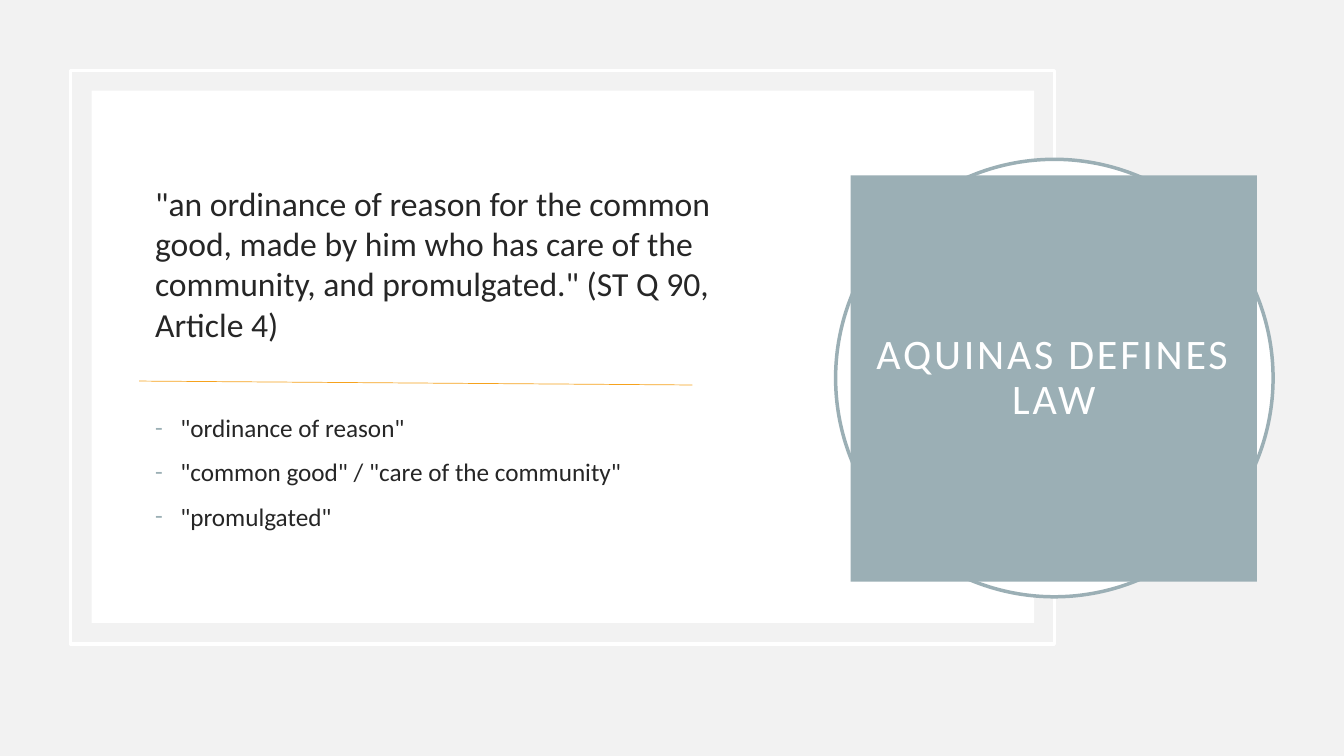
"""Builds the slide on Aquinas's definition of law."""
from lxml.etree import SubElement
from pptx import Presentation
from pptx.dml.color import RGBColor
from pptx.enum.shapes import MSO_CONNECTOR, MSO_SHAPE
from pptx.enum.text import MSO_ANCHOR, PP_ALIGN
from pptx.oxml.ns import qn
from pptx.util import Pt

GREY = RGBColor(0xF2, 0xF2, 0xF2)
WHITE = RGBColor(0xFF, 0xFF, 0xFF)
SLATE = RGBColor(0x9B, 0xAF, 0xB5)
INK = RGBColor(0x26, 0x26, 0x26)
ORANGE = RGBColor(0xF6, 0xA2, 0x1D)


def add_panel(kind, box, fill, line):
    sp = slide.shapes.add_shape(kind, *map(Pt, box))
    sp.shadow.inherit = False
    if fill is None:
        sp.fill.background()
    else:
        sp.fill.solid()
        sp.fill.fore_color.rgb = fill
    if line is None:
        sp.line.fill.background()
    else:
        sp.line.color.rgb = line
        sp.line.width = Pt(2.5)
    return sp


def add_text(p, text, size, color):
    r = p.add_run()
    r.text = text
    for name, value in {"name": "Calibri", "size": Pt(size)}.items():
        setattr(r.font, name, value)
    r.font.color.rgb = color
    return r


prs = Presentation()
prs.slide_width, prs.slide_height = Pt(960), Pt(540)
slide = prs.slides.add_slide(prs.slide_layouts[6])
slide.background.fill.solid()
slide.background.fill.fore_color.rgb = GREY

add_panel(MSO_SHAPE.RECTANGLE, (50.4, 50.4, 702.7, 409.7), None, WHITE)
add_panel(MSO_SHAPE.RECTANGLE, (65.5, 64.8, 673.2, 380.2), WHITE, None)

body = slide.shapes.add_textbox(Pt(103.7), Pt(100.8), Pt(450), Pt(308.2))
tf = body.text_frame
tf.word_wrap = True
tf.vertical_anchor = MSO_ANCHOR.MIDDLE
p = tf.paragraphs[0]
p.space_before = Pt(10)
add_text(p, '"an ordinance of reason for the common good, made by him who has care '
            'of the community, and promulgated." (ST Q 90, Article 4)', 24, INK)

key_phrases = ['"ordinance of reason"',
               '"common good" / "care of the community"',
               '"promulgated"']
for i, phrase in enumerate(key_phrases):
    p = tf.add_paragraph()
    p.space_before = Pt(10 if i else 49)
    add_text(p, phrase, 18, INK)
    pPr = p._p.get_or_add_pPr()
    pPr.set("marL", str(Pt(18)))
    pPr.set("indent", str(-Pt(18)))
    SubElement(SubElement(pPr, qn("a:buClr")), qn("a:srgbClr"), val=str(SLATE))
    SubElement(pPr, qn("a:buFont"), typeface="Calibri")
    SubElement(pPr, qn("a:buChar"), char="-")

add_panel(MSO_SHAPE.OVAL, (596.9, 113.8, 312.5, 312.5), WHITE, SLATE)
title = add_panel(MSO_SHAPE.RECTANGLE, (607.7, 125.3, 290.2, 290.2), SLATE, None)
tf = title.text_frame
frame_format = {"word_wrap": True, "vertical_anchor": MSO_ANCHOR.MIDDLE}
for side in ("left", "right", "top", "bottom"):
    frame_format[f"margin_{side}"] = Pt(14.4)
for name, value in frame_format.items():
    setattr(tf, name, value)
p = tf.paragraphs[0]
p.alignment = PP_ALIGN.CENTER
p.line_spacing = 0.9
r = add_text(p, "AQUINAS DEFINES LAW", 30, WHITE)
r.font._element.set("spc", "200")

divider = slide.shapes.add_connector(
    MSO_CONNECTOR.STRAIGHT, Pt(99.4), Pt(272.2), Pt(494.6), Pt(275))
divider.line.color.rgb = ORANGE
divider.line.width = Pt(0.5)
SubElement(divider._element.spPr, qn("a:effectLst"))

prs.save("out.pptx")
